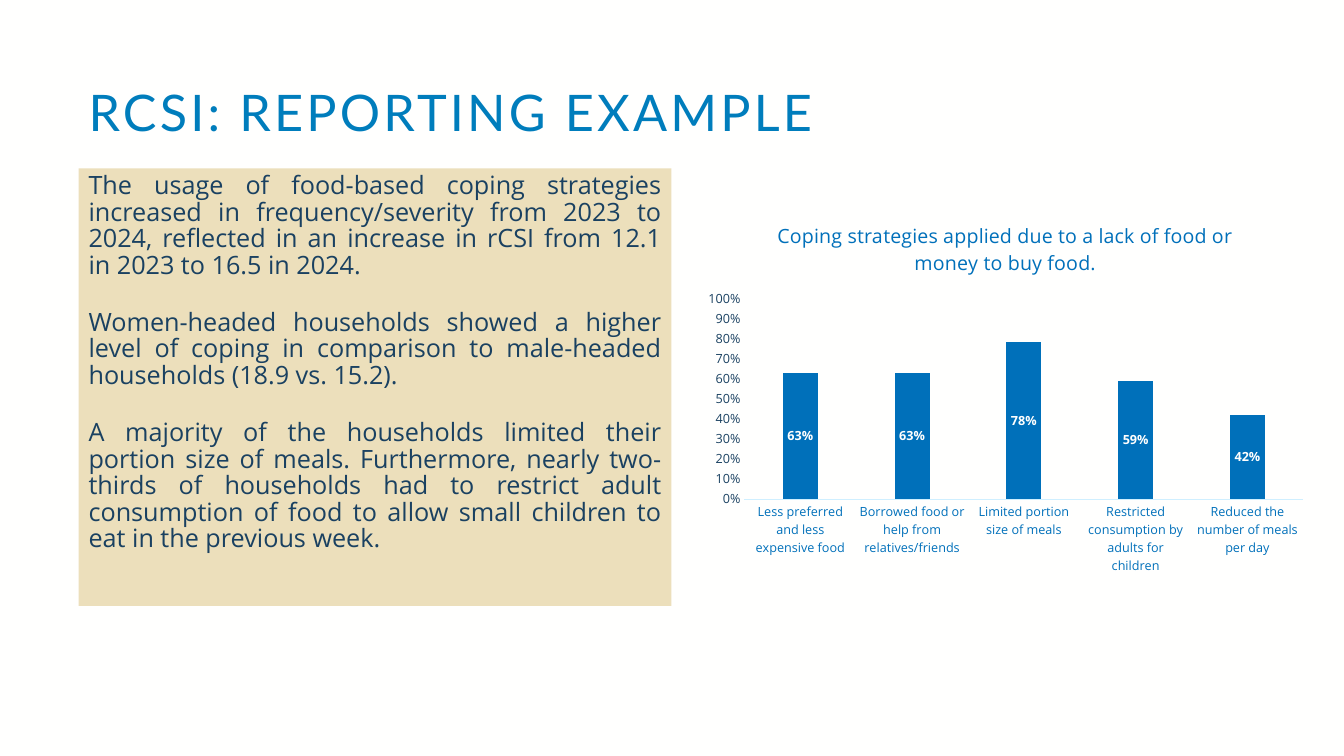
import pptx
import pptx.chart.data
import pptx.dml.color
import pptx.enum.chart
import pptx.enum.shapes
import pptx.enum.text
import pptx.oxml
import pptx.oxml.ns
import pptx.util
from pptx.util import Inches, Pt

# Content
TITLE = "RCSI: REPORTING EXAMPLE"
FINDINGS = [
    "The usage of food-based coping strategies increased in frequency/severity from 2023 to 2024, "
    "reflected in an increase in rCSI from 12.1 in 2023 to 16.5 in 2024.",
    "Women-headed households showed a higher level of coping in comparison to male-headed "
    "households (18.9 vs. 15.2).",
    "A majority of the households limited their portion size of meals. Furthermore, nearly "
    "two-thirds of households had to restrict adult consumption of food to allow small children "
    "to eat in the previous week.",
]
CHART_TITLE = "Coping strategies applied due to a lack of food or money to buy food."
STRATEGIES = {
    "Less preferred and less expensive food": 0.63,
    "Borrowed food or help from relatives/friends": 0.63,
    "Limited portion size of meals": 0.78,
    "Restricted consumption by adults for children": 0.59,
    "Reduced the number of meals per day": 0.42,
}
COLORS = {
    "page": "FFFFFE",
    "title": "007DBC",
    "panel": "ECDFBB",
    "text": "1A4161",
    "bar": "0070BA",
    "axis": "CFEFFF",
}
LEFT = 0.78
PLOT_AREA = {"x": 0.08, "y": 0.25, "w": 0.9, "h": 0.53}


def color(name):
    return pptx.dml.color.RGBColor.from_string(COLORS[name])


def style(font, size, color_name, face="Open Sans", bold=False):
    font.name, font.size, font.bold = face, Pt(size), bold
    font.color.rgb = color(color_name)


def add_title(page):
    box = page.shapes.add_textbox(Inches(LEFT), Inches(0.78), Inches(12.09), Inches(0.72))
    frame = box.text_frame
    frame.word_wrap = True
    frame.vertical_anchor = pptx.enum.text.MSO_ANCHOR.MIDDLE
    frame.text = TITLE
    para = frame.paragraphs[0]
    para.line_spacing = 0.9
    span = para.runs[0]
    style(span.font, 36, "title", "Lato")
    span.font._element.set("spc", "230")


def add_findings(page):
    panel = page.shapes.add_shape(pptx.enum.shapes.MSO_SHAPE.RECTANGLE,
                                  Inches(LEFT), Inches(1.67), Inches(5.88), Inches(4.34))
    panel.shadow.inherit = False
    panel.fill.solid()
    panel.fill.fore_color.rgb = color("panel")
    panel.line.fill.background()
    frame = panel.text_frame
    frame.word_wrap = True
    frame.vertical_anchor = pptx.enum.text.MSO_ANCHOR.TOP
    frame.text = "\n".join(FINDINGS)
    for index, para in enumerate(frame.paragraphs):
        para.alignment = pptx.enum.text.PP_ALIGN.JUSTIFY
        para.line_spacing = 0.88
        if index:
            para.space_before = Pt(21.6)
        style(para.runs[0].font, 18, "text")


def add_strategy_chart(page):
    data = pptx.chart.data.CategoryChartData(number_format="0%")
    data.categories = list(STRATEGIES)
    data.add_series("Series 1", list(STRATEGIES.values()))
    chart = page.shapes.add_chart(pptx.enum.chart.XL_CHART_TYPE.COLUMN_CLUSTERED, Inches(6.89),
                                  Inches(2.02), Inches(6.16), Inches(3.76), data).chart
    style(chart.font, 10, "text")
    chart.has_legend = False
    chart.has_title = True
    chart.chart_title.include_in_layout = False
    heading = chart.chart_title.text_frame
    heading.text = CHART_TITLE
    style(heading.paragraphs[0].runs[0].font, 14, "bar")

    # Axes
    categories, values = chart.category_axis, chart.value_axis
    for axis, color_name in ((categories, "bar"), (values, "text")):
        axis.major_tick_mark = axis.minor_tick_mark = pptx.enum.chart.XL_TICK_MARK.NONE
        axis.has_major_gridlines = False
        style(axis.tick_labels.font, 9, color_name)
    categories.format.line.color.rgb = color("axis")
    categories.format.line.width = Pt(0.75)
    values.format.line.fill.background()
    values.minimum_scale, values.maximum_scale, values.major_unit = 0, 1, 0.1
    values.tick_labels.number_format = "0%"
    values.tick_labels.number_format_is_linked = False

    # Bars and labels
    plot = chart.plots[0]
    plot.vary_by_categories = False
    plot.gap_width, plot.overlap = 219, -27
    bars = plot.series[0].format.fill
    bars.solid()
    bars.fore_color.rgb = color("bar")
    plot.has_data_labels = True
    labels = plot.data_labels
    labels.show_value = True
    labels.position = pptx.enum.chart.XL_LABEL_POSITION.CENTER
    labels.number_format = "0%"
    labels.number_format_is_linked = False
    style(labels.font, 9, "page", bold=True)

    # Fixed place of the plot inside the chart
    area = chart._chartSpace.chart.plotArea
    for old in area.findall(pptx.oxml.ns.qn("c:layout")):
        area.remove(old)
    places = "".join(f'<c:{key} val="{value}"/>' for key, value in PLOT_AREA.items())
    area.insert(0, pptx.oxml.parse_xml(
        f'<c:layout {pptx.oxml.ns.nsdecls("c")}><c:manualLayout><c:layoutTarget val="inner"/>'
        f'<c:xMode val="edge"/><c:yMode val="edge"/>{places}</c:manualLayout></c:layout>'))


def main():
    deck = pptx.Presentation()
    deck.slide_width, deck.slide_height = Inches(13.33), Inches(7.5)
    page = deck.slides.add_slide(deck.slide_layouts[6])
    page.background.fill.solid()
    page.background.fill.fore_color.rgb = color("page")
    add_title(page)
    add_findings(page)
    add_strategy_chart(page)
    deck.save("out.pptx")


if __name__ == "__main__":
    main()
